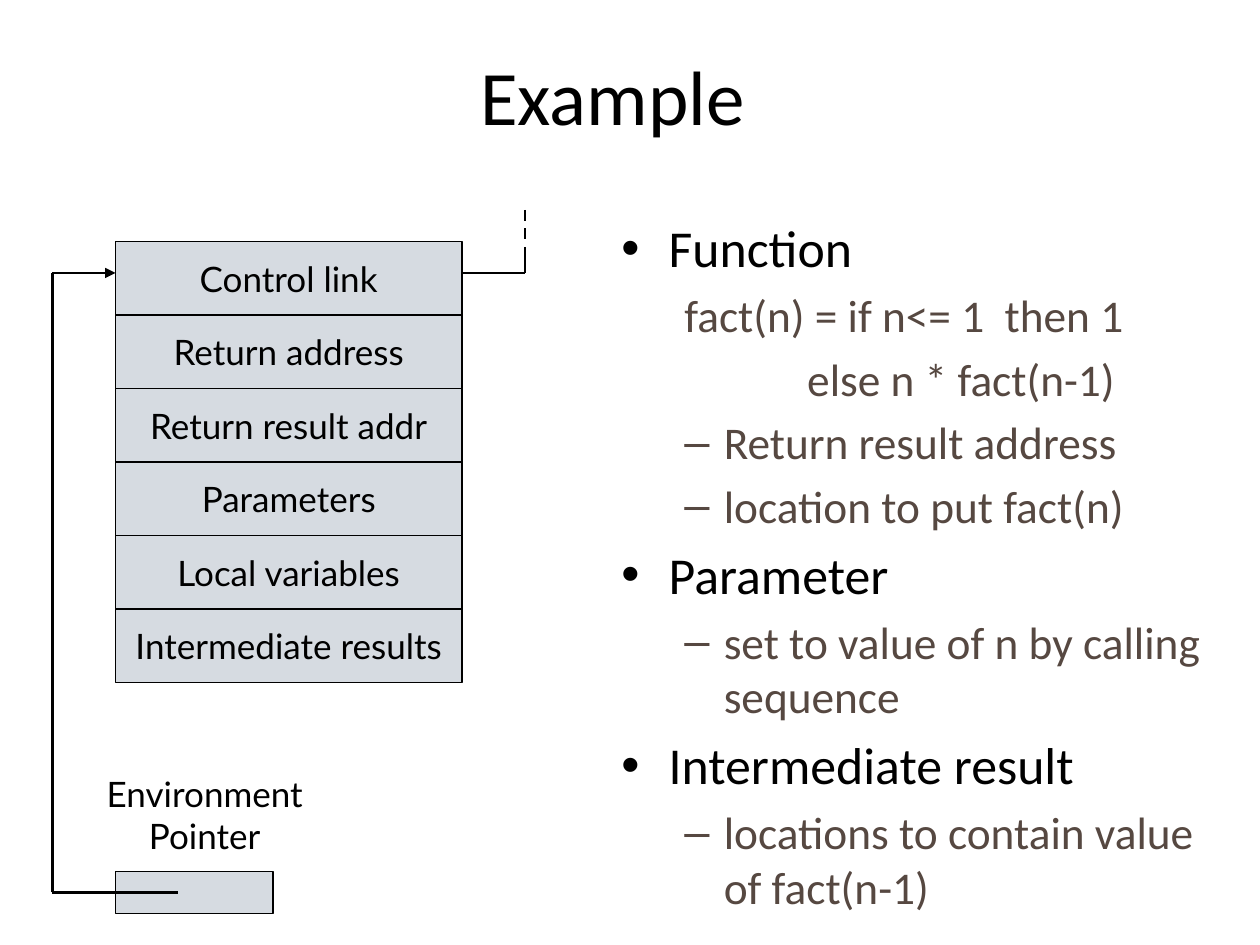
import pptx
import pptx.util
import pptx.dml.color
import pptx.enum.dml
import pptx.enum.shapes
import pptx.enum.text
import pptx.oxml.ns
import lxml.etree

Pt = pptx.util.Pt
RGB = pptx.dml.color.RGBColor
ANCHOR = pptx.enum.text.MSO_ANCHOR
CENTER = pptx.enum.text.PP_ALIGN.CENTER
BLACK = RGB(0x00, 0x00, 0x00)
BROWN = RGB(0x56, 0x48, 0x41)
GREY = RGB(0xD6, 0xDB, 0xE1)

deck = pptx.Presentation()
deck.slide_width = pptx.util.Inches(10)
deck.slide_height = pptx.util.Inches(7.5)
slide = deck.slides.add_slide(deck.slide_layouts[5])
shapes = slide.shapes

# Grid: 120 columns by 90 rows
UNIT = deck.slide_width // 120


def place(*cells):
    return [round(cell * UNIT) for cell in cells]


def style(para, text, size, color, font, gap):
    para.text = text
    para.font.size = Pt(size)
    para.font.name = font
    para.font.color.rgb = color
    para.space_before = Pt(gap)


# Title
title = shapes.title
title.left, title.top, title.width, title.height = place(5, 3, 106.7, 12)
title.text_frame.vertical_anchor = ANCHOR.MIDDLE
head = title.text_frame.paragraphs[0]
style(head, "Example", 44, BLACK, "Calibri", 0)
head.alignment = CENTER

# Notes on the right: level, bullet, first-line start in columns, text
notes = [
    (0, "•", 0, "Function"),
    (1, None, 6, "fact(n) = if n<= 1  then 1"),
    (1, None, 17.7, "else n * fact(n-1)"),
    (1, "–", 6, "Return result address"),
    (1, "–", 6, "location to put fact(n)"),
    (0, "•", 0, "Parameter"),
    (1, "–", 6, "set to value of n by calling sequence"),
    (0, "•", 0, "Intermediate result"),
    (1, "–", 6, "locations to contain value of fact(n-1)"),
]
looks = [(29.6, BLACK, 4.5), (25.9, BROWN, 9.75)]
body = shapes.add_textbox(*place(58, 20, 60, 66)).text_frame
body.word_wrap = True
for i, (level, mark, start, text) in enumerate(notes):
    para = body.add_paragraph() if i else body.paragraphs[0]
    size, color, left = looks[level]
    style(para, text, size, color, "Calibri", size * 0.2)
    para.level = level
    props = para._p.get_or_add_pPr()
    props.set("marL", str(round(left * UNIT)))
    props.set("indent", str(round((start - left) * UNIT)))
    if mark:
        font = lxml.etree.SubElement(props, pptx.oxml.ns.qn("a:buFont"))
        font.set("typeface", "Arial")
        bullet = lxml.etree.SubElement(props, pptx.oxml.ns.qn("a:buChar"))
        bullet.set("char", mark)
    else:
        lxml.etree.SubElement(props, pptx.oxml.ns.qn("a:buNone"))

# Activation record, with the pointer cell below it
fields = ["Control link", "Return address", "Return result addr",
          "Parameters", "Local variables", "Intermediate results"]
cells = [(text, 23 + 7 * i, 33, 7) for i, text in enumerate(fields)]
cells.append(("", 83, 15, 4))
for text, top, width, height in cells:
    box = shapes.add_shape(pptx.enum.shapes.MSO_SHAPE.RECTANGLE,
                           *place(11, top, width, height))
    box.shadow.inherit = False
    box.fill.solid()
    box.fill.fore_color.rgb = GREY
    box.line.color.rgb = BLACK
    box.line.width = Pt(0.75)
    if text:
        frame = box.text_frame
        frame.word_wrap = False
        frame.vertical_anchor = ANCHOR.MIDDLE
        para = frame.paragraphs[0]
        style(para, text, 20, BLACK, "Lato", 4)
        para.alignment = CENTER

# Pointer label
label = shapes.add_textbox(*place(7, 73, 25, 9.3)).text_frame
label.word_wrap = True
style(label.paragraphs[0], "Environment Pointer", 20, BLACK, "Lato", 10)
label.paragraphs[0].alignment = CENTER

# Lines: pointer to the record, then control link leading upwards
lines = [
    ((5, 85, 17, 85), None),
    ((5, 85, 5, 26), None),
    ((5, 26, 11, 26), "arrow"),
    ((44, 26, 50, 26), None),
    ((50, 24, 50, 26), None),
    ((50, 20, 50, 24), "dash"),
]
for ends, kind in lines:
    line = shapes.add_connector(pptx.enum.shapes.MSO_CONNECTOR.STRAIGHT,
                                *place(*ends))
    line.line.color.rgb = BLACK
    line.line.width = Pt(1.5)
    if kind == "dash":
        line.line.dash_style = pptx.enum.dml.MSO_LINE.DASH
    if kind == "arrow":
        tip = lxml.etree.SubElement(line.line._get_or_add_ln(),
                                    pptx.oxml.ns.qn("a:tailEnd"))
        tip.set("type", "triangle")
    lxml.etree.SubElement(line._element.spPr, pptx.oxml.ns.qn("a:effectLst"))

deck.save("out.pptx")
